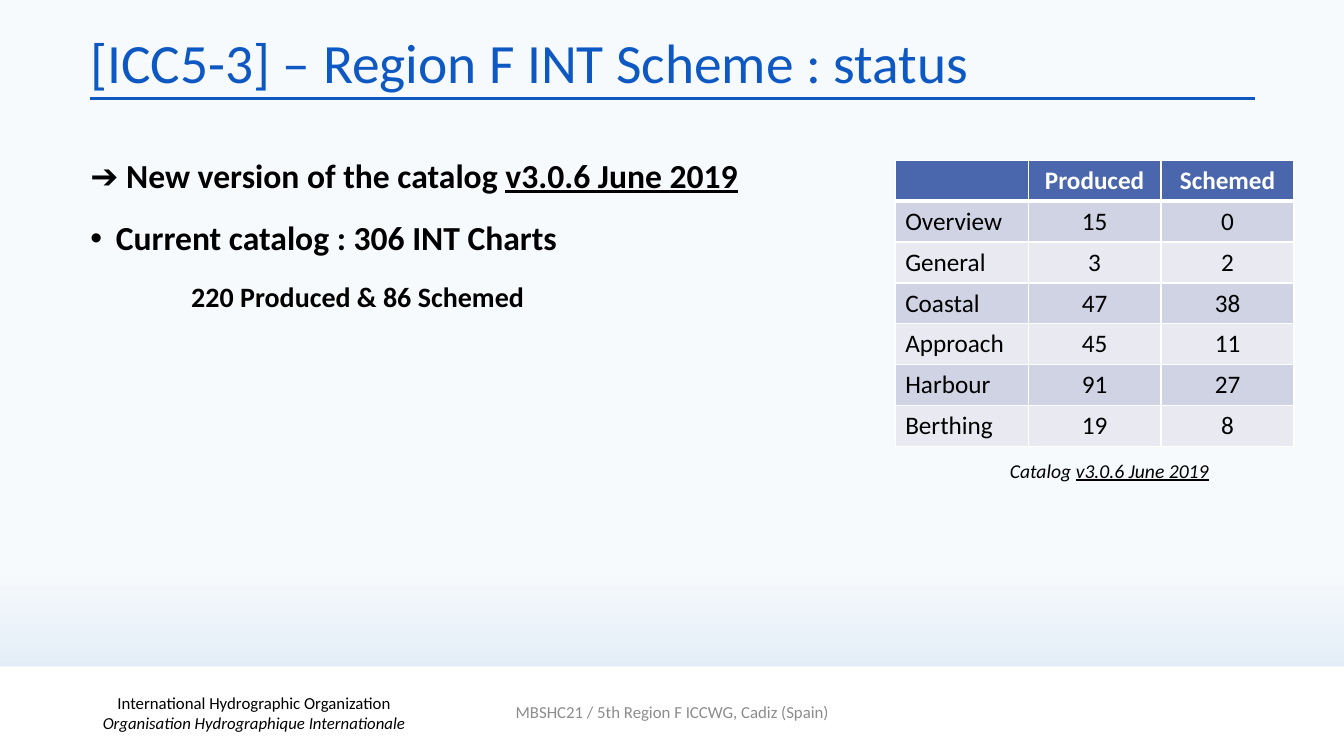
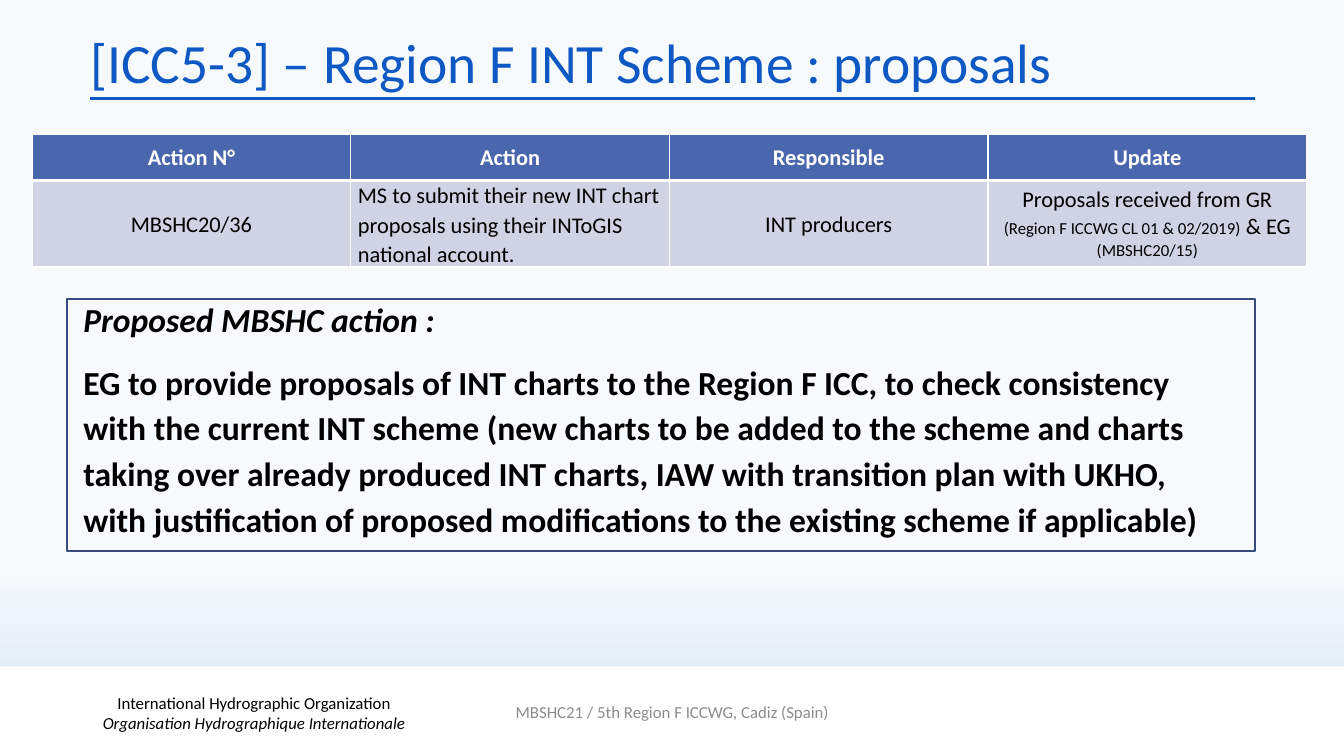
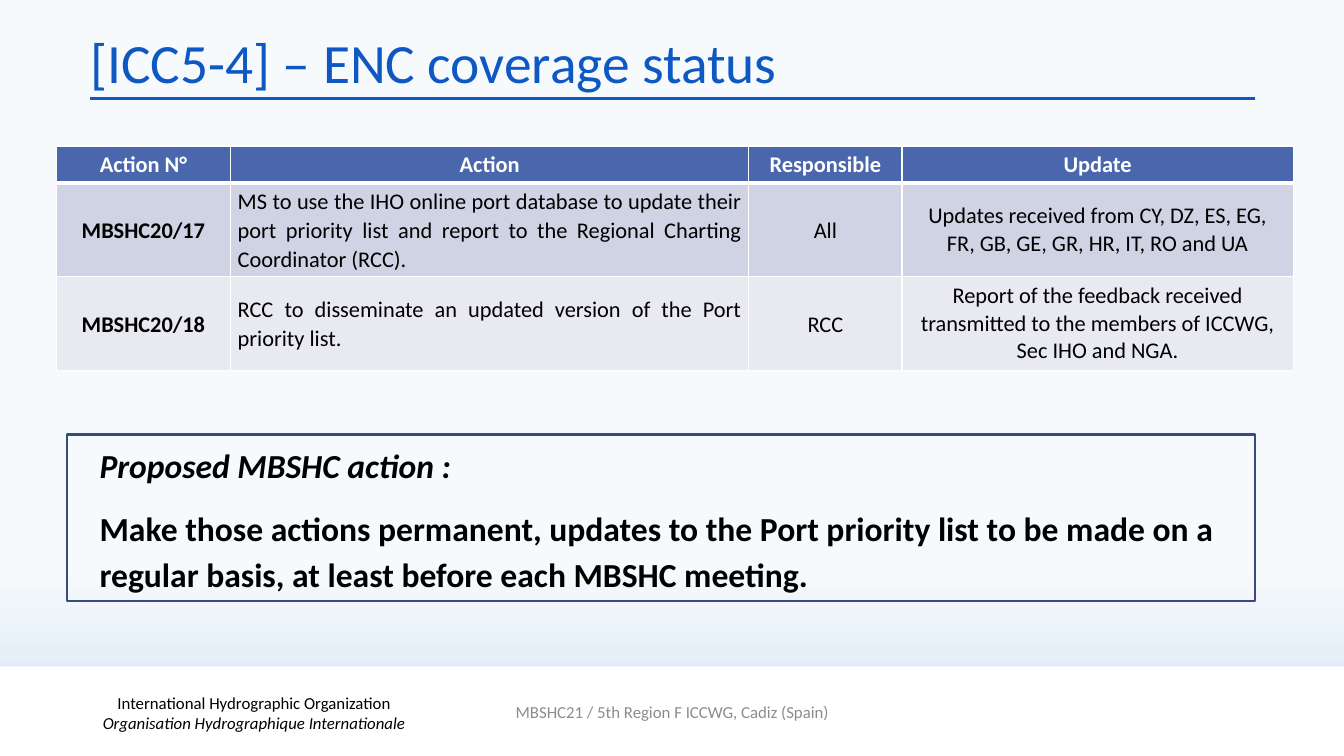
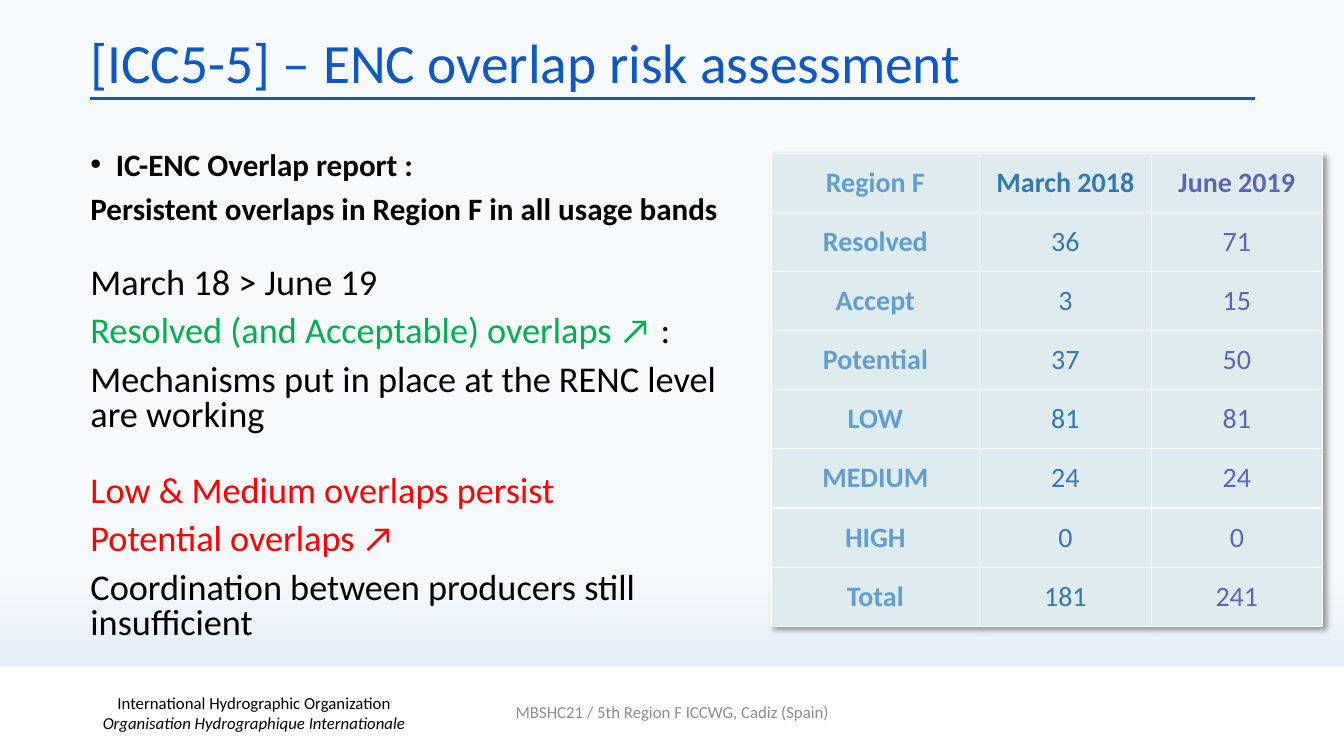
from dataclasses import dataclass

from lxml.etree import SubElement
from pptx import Presentation
from pptx.dml.color import RGBColor as RGB
from pptx.enum.shapes import MSO_CONNECTOR as CONN, MSO_SHAPE as SHAPE
from pptx.enum.text import MSO_ANCHOR as ANCHOR, PP_ALIGN as ALIGN
from pptx.oxml import parse_xml
from pptx.oxml.ns import nsdecls, qn
from pptx.util import Cm, Pt


@dataclass(frozen=True)
class Theme:
    font: str = "Calibri"
    ink: str = "000000"
    white: str = "FFFFFF"
    title: str = "0E58C4"
    footer: str = "8C8C8C"
    frame: str = "374B7F"
    sky: str = "F7FAFD"
    horizon: str = "D0E2F1"
    head: str = "4A66AC"
    bands: tuple = ("D0D3E3", "E9EAF1")
    pale: str = "DEECEF"
    column_inks: tuple = ("629DD1", "3477B2", "5C64B7")
    good: str = "00B050"
    bad: str = "FF0000"
    title_size: float = 39.6
    body_size: float = 24
    sub_size: float = 20
    lead_size: float = 22.2
    point_size: float = 25.9
    table_size: float = 18
    action_size: float = 16
    caption_size: float = 14
    small_size: float = 12


T = Theme()
L, C, J = ALIGN.LEFT, ALIGN.CENTER, ALIGN.JUSTIFY


def write(tf, paras, size, color=T.ink, bold=False, align=L, spacing=1.0, after=0):
    tf.word_wrap = True
    for i, para in enumerate(paras):
        p = tf.paragraphs[0] if i == 0 else tf.add_paragraph()
        opts = para if isinstance(para, dict) else {"runs": para}
        p.alignment, p.line_spacing = align, spacing
        p.space_before, p.space_after = Pt(opts.get("before", 0)), Pt(after)
        pPr = p._p.get_or_add_pPr()
        if "indent" in opts:
            pPr.set("marL", str(Cm(opts["indent"])))
        if opts.get("bullet"):
            pPr.set("marL", str(Cm(0.64)))
            pPr.set("indent", str(-Cm(0.64)))
            SubElement(pPr, qn("a:buFont"), typeface="Arial")
            SubElement(pPr, qn("a:buChar"), char="•")
        runs = opts["runs"]
        for run in [(runs, {})] if isinstance(runs, str) else runs:
            text, look = run
            r = p.add_run()
            r.text = text
            r.font.name = T.font
            r.font.size = Pt(look.get("size", size))
            r.font.bold = look.get("bold", bold)
            r.font.italic = look.get("italic", False)
            r.font.underline = look.get("underline", False)
            r.font.color.rgb = RGB.from_string(look.get("color", color))


def add_table(s, left, top, widths, heights, rows, size, aligns, fills,
              inks=None, bold_first=False, anchor=ANCHOR.MIDDLE, tight=0):
    table = s.shapes.add_table(len(rows), len(widths), Cm(left), Cm(top),
                               Cm(sum(widths)), Cm(sum(heights))).table
    table.first_row = table.horz_banding = False
    for col, width in zip(table.columns, widths):
        col.width = Cm(width)
    for i, (row, height) in enumerate(zip(rows, heights)):
        table.rows[i].height = Cm(height)
        head = i == 0
        for j, content in enumerate(row):
            cell = table.cell(i, j)
            cell.vertical_anchor = anchor
            tcPr = cell._tc.get_or_add_tcPr()
            for side in "LRTB":
                thick = not inks and (head and side == "B" or i == 1 and side == "T")
                tcPr.append(parse_xml(
                    f'<a:ln{side} {nsdecls("a")} w="{Pt(3 if thick else 1)}"><a:solidFill>'
                    f'<a:srgbClr val="{T.white}"/></a:solidFill></a:ln{side}>'))
            cell.fill.solid()
            cell.fill.fore_color.rgb = RGB.from_string(fills[0] if head else fills[1 + (i - 1) % 2])
            snug = not head and j < tight
            if snug:
                cell.margin_left = cell.margin_right = Cm(0.18)
                cell.margin_top = cell.margin_bottom = 0
            color = inks[j] if inks else T.white if head else T.ink
            write(cell.text_frame, [content], size, color, head or bold_first and j == 0,
                  C if head else aligns[j], 1.07 if snug else 1.0)
    return table


prs = Presentation()
prs.slide_width, prs.slide_height = Cm(33.87), Cm(19.05)

fill = prs.slide_master.background.fill
fill.gradient()
fill.gradient_angle = 270
for stop, position, color in zip(fill.gradient_stops, (0.75, 1), (T.sky, T.horizon)):
    stop.position = position
    stop.color.rgb = RGB.from_string(color)

titles = [
    "[ICC5-3] – Region F INT Scheme : status",
    "[ICC5-3] – Region F INT Scheme : proposals",
    "[ICC5-4] – ENC coverage status",
    "[ICC5-5] – ENC overlap risk assessment",
]
organization = ["International Hydrographic Organization",
                [("Organisation Hydrographique Internationale", {"italic": True})]]
meeting = ["MBSHC21 / 5th Region F ICCWG, Cadiz (Spain)"]

for title in titles:
    s = prs.slides.add_slide(prs.slide_layouts[6])
    rule = s.shapes.add_connector(CONN.STRAIGHT, Cm(2.26), Cm(2.49), Cm(31.62), Cm(2.49))
    rule.line.color.rgb = RGB.from_string(T.title)
    rule.line.width = Pt(2.25)
    SubElement(rule._element.spPr, qn("a:effectLst"))
    band = s.shapes.add_shape(SHAPE.RECTANGLE, 0, Cm(16.79), prs.slide_width, Cm(2.26))
    band.shadow.inherit = False
    band.fill.solid()
    band.fill.fore_color.rgb = RGB.from_string(T.white)
    band.line.fill.background()
    for box, paras, size, color, align, spacing in [
        ((2.03, 0.76, 24.94, 1.78), [title], T.title_size, T.title, L, 0.9),
        ((0.69, 17.45, 11.43, 1.02), organization, T.small_size, T.ink, C, 1.0),
        ((11.23, 17.42, 11.43, 1.02), meeting, T.small_size, T.footer, C, 1.0),
    ]:
        tf = s.shapes.add_textbox(*map(Cm, box)).text_frame
        tf.vertical_anchor = ANCHOR.MIDDLE
        write(tf, paras, size, color, align=align, spacing=spacing)

status, proposals, coverage, overlap = prs.slides

catalog = [
    [("➔ New version of the catalog ", {}), ("v3.0.6 June 2019", {"underline": True})],
    {"runs": "Current catalog : 306 INT Charts", "bullet": True},
    {"runs": [("220 Produced & 86 Schemed", {"size": T.sub_size})], "indent": 2.54},
]
heading = [("Proposed MBSHC action :", {"italic": True})]
scheme_action = [
    heading,
    "EG to provide proposals of INT charts to the Region F ICC, to check consistency with the "
    "current INT scheme (new charts to be added to the scheme and charts taking over already "
    "produced INT charts, IAW with transition plan with UKHO, with justification of proposed "
    "modifications to the existing scheme if applicable)",
]
port_action = [
    heading,
    "Make those actions permanent, updates to the Port priority list to be made on a regular "
    "basis, at least before each MBSHC meeting.",
]
for s, left, top, height, paras in [
    (status, 2.03, 3.63, 7.75, catalog),
    (proposals, 1.85, 7.26, 7.75, scheme_action),
    (coverage, 2.26, 10.95, 4.19, port_action),
]:
    tf = s.shapes.add_textbox(Cm(left), Cm(top), Cm(29.57), Cm(height)).text_frame
    write(tf, paras, T.body_size, bold=True, spacing=1.14, after=12)

for s, top, height in [(proposals, 7.54, 6.35), (coverage, 10.95, 4.19)]:
    frame = s.shapes.add_shape(SHAPE.RECTANGLE, Cm(1.7), Cm(top), Cm(29.92), Cm(height))
    frame.shadow.inherit = False
    frame.fill.background()
    frame.line.color.rgb = RGB.from_string(T.frame)
    frame.line.width = Pt(1.5)

chart_counts = [
    ("", "Produced", "Schemed"),
    ("Overview", "15", "0"),
    ("General", "3", "2"),
    ("Coastal", "47", "38"),
    ("Approach", "45", "11"),
    ("Harbour", "91", "27"),
    ("Berthing", "19", "8"),
]
banded = (T.head, *T.bands)
add_table(status, 22.56, 4.04, [3.35] * 3, [1.03] * 7, chart_counts, T.table_size,
          (L, C, C), banded, anchor=ANCHOR.TOP)
tf = status.shapes.add_textbox(Cm(25.2), Cm(11.43), Cm(6.2), Cm(0.86)).text_frame
write(tf, [[("Catalog ", {"italic": True}),
            ("v3.0.6 June 2019", {"italic": True, "underline": True})]], T.caption_size)

action_head = ("Action N°", "Action", "Responsible", "Update")
small = {"size": T.small_size}
scheme_rows = [
    action_head,
    ("MBSHC20/36",
     "MS to submit their new INT chart proposals using their INToGIS national account.",
     "INT producers",
     [("Proposals received from GR ", {}), ("(Region F ICCWG CL 01 & 02/2019)", small),
      (" & EG ", {}), ("(MBSHC20/15)", small)]),
]
add_table(proposals, 0.81, 3.38, [8.03] * 4, [1.17, 2.18], scheme_rows, T.action_size,
          (C, L, C, C), banded, tight=3)

port_rows = [
    action_head,
    ("MBSHC20/17",
     "MS to use the IHO online port database to update their port priority list and report to "
     "the Regional Charting Coordinator (RCC).",
     "All",
     "Updates received from CY, DZ, ES, EG, FR, GB, GE, GR, HR, IT, RO and UA"),
    ("MBSHC20/18",
     "RCC to disseminate an updated version of the Port priority list.",
     "RCC",
     "Report of the feedback received transmitted to the members of ICCWG, Sec IHO and NGA."),
]
add_table(coverage, 1.42, 3.68, [4.39, 13.06, 3.86, 9.86], [0.93, 2.36, 2.36], port_rows,
          T.action_size, (C, J, C, C), banded, bold_first=True, tight=3)

lead = {"size": T.lead_size, "bold": True}
good, bad = {"color": T.good}, {"color": T.bad}
findings = [
    {"runs": [("IC-ENC Overlap report :", lead)], "bullet": True},
    {"runs": [("Persistent overlaps in Region F in all usage bands", lead)], "before": 10},
    {"runs": "March 18 > June 19", "before": 29},
    {"runs": [("Resolved (and Acceptable) overlaps ↗ ", good), (":", {})], "before": 10},
    {"runs": "Mechanisms put in place at the RENC level are working", "before": 10},
    {"runs": [("Low & Medium overlaps persist", bad)], "before": 29},
    {"runs": [("Potential overlaps ↗", bad)], "before": 10},
    {"runs": "Coordination between producers still insufficient", "before": 10},
]
tf = overlap.shapes.add_textbox(Cm(2.03), Cm(3.73), Cm(17.2), Cm(12.57)).text_frame
write(tf, findings, T.point_size, spacing=0.8)

overlap_counts = [
    ("Region F", "March 2018", "June 2019"),
    ("Resolved", "36", "71"),
    ("Accept", "3", "15"),
    ("Potential", "37", "50"),
    ("LOW", "81", "81"),
    ("MEDIUM", "24", "24"),
    ("HIGH", "0", "0"),
    ("Total", "181", "241"),
]
table = add_table(overlap, 19.43, 3.86, [5.26, 4.32, 4.32], [1.49] * 8, overlap_counts,
                  T.sub_size, (C, C, C), (T.pale,) * 3, T.column_inks, bold_first=True)
table._tbl.tblPr.insert(0, parse_xml(
    f'<a:effectLst {nsdecls("a")}><a:outerShdw blurRad="{Pt(4)}" dist="{Pt(3)}" dir="2700000" '
    f'algn="tl" rotWithShape="0"><a:srgbClr val="{T.ink}"><a:alpha val="40000"/></a:srgbClr>'
    '</a:outerShdw></a:effectLst>'))

prs.save("out.pptx")
